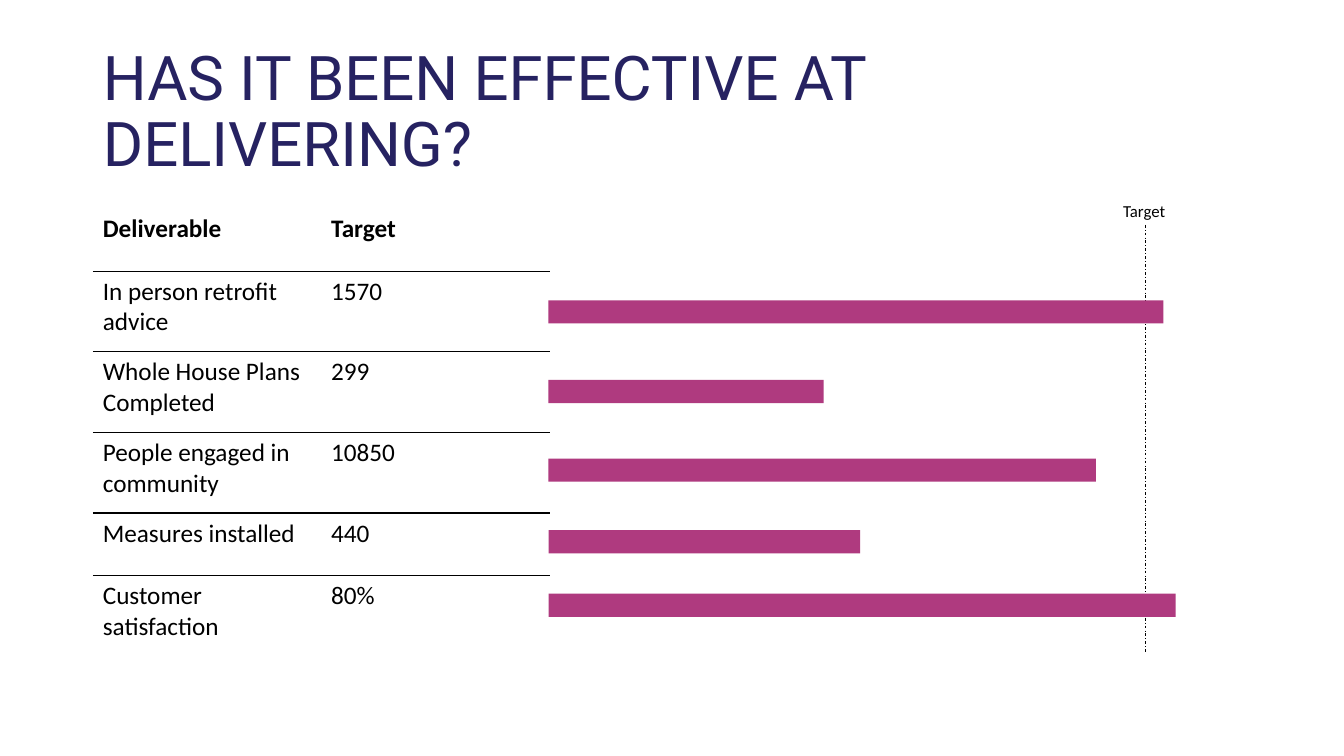
from lxml import etree
from pptx import Presentation
from pptx.dml.color import RGBColor
from pptx.enum.dml import MSO_LINE
from pptx.enum.shapes import MSO_CONNECTOR, MSO_SHAPE
from pptx.enum.text import MSO_ANCHOR, PP_ALIGN
from pptx.oxml.ns import qn
from pptx.util import Inches, Pt

RECTANGLE = MSO_SHAPE.RECTANGLE
STRAIGHT = MSO_CONNECTOR.STRAIGHT
DASH_DOT = MSO_LINE.DASH_DOT
MIDDLE = MSO_ANCHOR.MIDDLE
LEFT = PP_ALIGN.LEFT
TITLE_ONLY = 5

COLORS = {"title": "262261", "text": "000000", "line": "000000", "bar": "AF3A7F"}

HEADER = ("Deliverable", "Target")
DELIVERABLES = [
    ("In person retrofit advice", "1570"),
    ("Whole House Plans Completed", "299"),
    ("People engaged in community", "10850"),
    ("Measures installed", "440"),
    ("Customer satisfaction", "80%"),
]
ROW_HEIGHTS = [0.62, 0.8, 0.8, 0.8, 0.62, 0.8]
COLUMN_WIDTH = 2.265

BAR_LEFT, BAR_HEIGHT = 5.44, 0.23
BARS = [(2.98, 6.1), (3.77, 2.73), (4.55, 5.43), (5.26, 3.09), (5.89, 6.22)]  # top, width


def color(name):
    return RGBColor.from_string(COLORS[name])


def write_text(frame, text, size=18, font="Calibri", fill="text", bold=False, spacing=None):
    frame.word_wrap = True
    paragraph = frame.paragraphs[0]
    paragraph.alignment = LEFT
    paragraph.line_spacing = spacing
    run = paragraph.add_run()
    run.text = text
    run.font.size = Pt(size)
    run.font.name = font
    run.font.bold = bold
    run.font.color.rgb = color(fill)


def set_borders(cell, visible):
    """Draw the named edges of a cell and clear the others."""
    properties = cell._tc.get_or_add_tcPr()
    for index, edge in enumerate(("lnL", "lnR", "lnT", "lnB")):
        border = etree.Element(qn(f"a:{edge}"), w=str(Pt(1)))
        if edge in visible:
            solid = etree.SubElement(border, qn("a:solidFill"))
            etree.SubElement(solid, qn("a:srgbClr"), val=COLORS["line"])
        else:
            etree.SubElement(border, qn("a:noFill"))
        properties.insert(index, border)


def add_title(slide, text):
    title = slide.shapes.title
    title.left, title.top = Inches(0.92), Inches(0.4)
    title.width, title.height = Inches(11.5), Inches(1.45)
    title.text_frame.vertical_anchor = MIDDLE
    write_text(title.text_frame, text, size=44, font="Roboto", fill="title", spacing=0.9)


def add_deliverables_table(slide):
    rows = [HEADER, *DELIVERABLES]
    table = slide.shapes.add_table(
        len(rows), len(HEADER), Inches(0.92), Inches(2.07),
        Inches(COLUMN_WIDTH * len(HEADER)), Inches(sum(ROW_HEIGHTS)),
    ).table
    table.horz_banding = False
    table.first_row = False
    for column in table.columns:
        column.width = Inches(COLUMN_WIDTH)
    for row_index, (values, height) in enumerate(zip(rows, ROW_HEIGHTS)):
        table.rows[row_index].height = Inches(height)
        edges = set()
        if row_index > 0:
            edges.add("lnT")
        if row_index < len(rows) - 1:
            edges.add("lnB")
        for column_index, value in enumerate(values):
            cell = table.cell(row_index, column_index)
            cell.fill.background()
            write_text(cell.text_frame, value, bold=row_index == 0)
            set_borders(cell, edges)


def add_target_line(slide):
    x = Inches(11.36)
    line = slide.shapes.add_connector(STRAIGHT, x, Inches(2.23), x, Inches(6.48))
    line.line.color.rgb = color("line")
    line.line.width = Pt(0.5)
    line.line.dash_style = DASH_DOT
    etree.SubElement(line._element.spPr, qn("a:effectLst"))


def add_bar(slide, top, width):
    bar = slide.shapes.add_shape(
        RECTANGLE, Inches(BAR_LEFT), Inches(top), Inches(width), Inches(BAR_HEIGHT)
    )
    bar.shadow.inherit = False
    bar.fill.solid()
    bar.fill.fore_color.rgb = color("bar")
    bar.line.fill.background()


def add_label(slide, text, left, top, width, height):
    box = slide.shapes.add_textbox(Inches(left), Inches(top), Inches(width), Inches(height))
    write_text(box.text_frame, text, size=12)


def main():
    presentation = Presentation()
    presentation.slide_width = Inches(13.33)
    presentation.slide_height = Inches(7.5)
    slide = presentation.slides.add_slide(presentation.slide_layouts[TITLE_ONLY])
    add_title(slide, "HAS IT BEEN EFFECTIVE AT DELIVERING?")
    add_deliverables_table(slide)
    add_target_line(slide)
    for top, width in BARS:
        add_bar(slide, top, width)
    add_label(slide, "Target", 11.04, 1.94, 0.86, 0.3)
    presentation.save("out.pptx")


if __name__ == "__main__":
    main()
